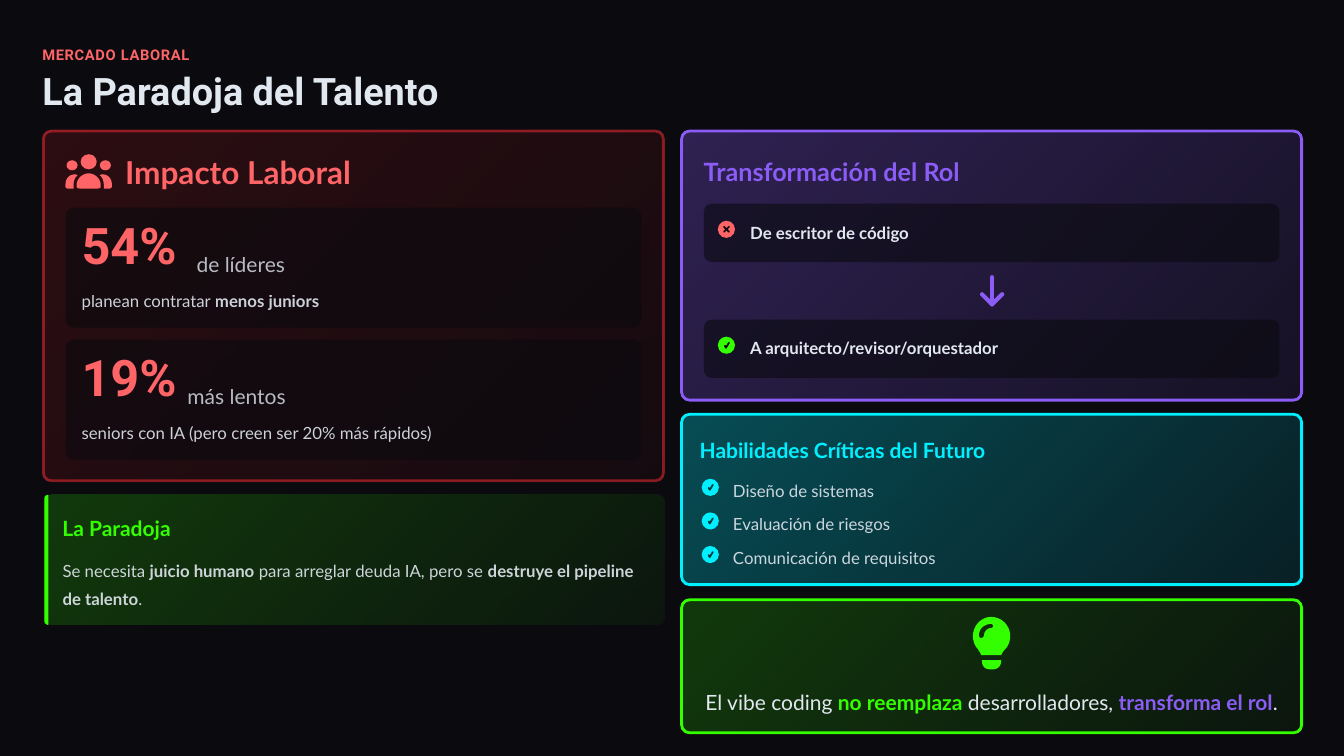
from lxml import etree
from pptx import Presentation
from pptx.dml.color import RGBColor
from pptx.enum.shapes import MSO_SHAPE
from pptx.enum.text import MSO_ANCHOR, PP_ALIGN
from pptx.oxml.ns import qn
from pptx.util import Inches, Pt

ROUNDED = MSO_SHAPE.ROUNDED_RECTANGLE
OVAL = MSO_SHAPE.OVAL
MIDDLE = MSO_ANCHOR.MIDDLE
LEFT = PP_ALIGN.LEFT
CENTER = PP_ALIGN.CENTER

NIGHT = RGBColor(0x0A, 0x0A, 0x0F)
TEAL = RGBColor(0x08, 0x36, 0x3F)
PALE = RGBColor(0xE2, 0xE8, 0xF0)
CORAL = RGBColor(0xFF, 0x64, 0x67)
RED = RGBColor(0xFB, 0x2C, 0x36)
MAROON = RGBColor(0x82, 0x18, 0x1A)
GREEN = RGBColor(0x33, 0xFF, 0x00)
PURPLE = RGBColor(0x8B, 0x5C, 0xF6)
CYAN = RGBColor(0x00, 0xF0, 0xFF)

CORNER = 0.08
CURVE_STEPS = 10
CHECK = [[(0.07, 0.09), (0.08, 0.11), (0.11, 0.06)]]
CROSS = [[(0.06, 0.06), (0.11, 0.11)], [(0.11, 0.06), (0.06, 0.11)]]


def set_alpha(element, percent):
    for color in element.iter(qn("a:srgbClr")):
        etree.SubElement(color, qn("a:alpha")).set("val", str(percent * 1000))


def add_solid(slide, preset, box, color, alpha=100):
    shape = slide.shapes.add_shape(preset, *map(Inches, box))
    shape.shadow.inherit = False
    shape.fill.solid()
    shape.fill.fore_color.rgb = color
    shape.line.fill.background()
    if alpha < 100:
        set_alpha(shape.fill._xPr, alpha)
    if preset == ROUNDED:
        shape.adjustments[0] = CORNER / min(box[2:])
    return shape


def add_card(slide, box, color, alphas, border=None, border_alpha=100):
    card = add_solid(slide, ROUNDED, box, color)
    card.fill.gradient()
    card.fill.gradient_angle = 315
    for stop, position, alpha in zip(card.fill.gradient_stops, (0, 1), alphas):
        stop.position = position
        stop.color.rgb = color
        set_alpha(stop._gs, alpha)
    if border is not None:
        card.line.color.rgb = border
        card.line.width = Pt(2)
        if border_alpha < 100:
            set_alpha(card.line._ln, border_alpha)


def add_panel(slide, left, top, height):
    add_solid(slide, ROUNDED, (left, top, 5.71, height), NIGHT, 60)


def add_text(slide, box, runs, size, spacing=1.2, font="Lato", alpha=100,
             align=LEFT, tracking=None):
    frame = slide.shapes.add_textbox(*map(Inches, box)).text_frame
    frame.word_wrap = True
    frame.vertical_anchor = MIDDLE
    frame.margin_left = frame.margin_right = 0
    frame.margin_top = frame.margin_bottom = 0
    paragraph = frame.paragraphs[0]
    paragraph.alignment = align
    paragraph.line_spacing = spacing
    for text, color, bold in runs:
        run = paragraph.add_run()
        run.text = text
        run.font.name = font
        run.font.size = Pt(size)
        run.font.bold = bold
        run.font.color.rgb = color
        if alpha < 100:
            set_alpha(run.font._element, alpha)
        if tracking:
            run.font._element.set("spc", str(tracking))


def flatten(contour):
    points = [contour[0]]
    for segment in contour[1:]:
        if len(segment) == 2:
            points.append(segment)
            continue
        knots = [points[-1], segment[:2], segment[2:4], segment[4:]]
        for step in range(1, CURVE_STEPS + 1):
            t = step / CURVE_STEPS
            weights = ((1 - t) ** 3, 3 * t * (1 - t) ** 2, 3 * t * t * (1 - t), t ** 3)
            points.append(tuple(
                sum(weight * knot[axis] for weight, knot in zip(weights, knots))
                for axis in (0, 1)))
    return points


def build_outline(slide, contours, closed):
    builder = None
    for contour in contours:
        points = [(Inches(x), Inches(y)) for x, y in flatten(contour)]
        if builder is None:
            builder = slide.shapes.build_freeform(*points[0])
        else:
            builder.move_to(*points[0])
        builder.add_line_segments(points[1:], close=closed)
    shape = builder.convert_to_shape()
    shape.shadow.inherit = False
    return shape


def add_outline(slide, contours, color):
    shape = build_outline(slide, contours, True)
    shape.fill.solid()
    shape.fill.fore_color.rgb = color
    shape.line.fill.background()


def add_stroke(slide, contours, color, width):
    shape = build_outline(slide, contours, False)
    shape.fill.background()
    shape.line.color.rgb = color
    shape.line.width = Pt(width)
    shape.line._ln.set("cap", "rnd")


def add_badge(slide, left, top, color, mark, mark_color):
    add_solid(slide, OVAL, (left, top, 0.17, 0.17), color)
    strokes = [[(left + x, top + y) for x, y in line] for line in mark]
    add_stroke(slide, strokes, mark_color, 1.25)


def add_people_icon(slide):
    for head in ((0.8, 1.53, 0.16, 0.15), (0.66, 1.59, 0.11, 0.1), (0.99, 1.59, 0.11, 0.1)):
        add_solid(slide, OVAL, head, CORAL)
    side = [(0.65, 1.83), (0.65, 1.77, 0.69, 1.73, 0.74, 1.73),
            (0.75, 1.73, 0.76, 1.73, 0.77, 1.74), (0.74, 1.76, 0.73, 1.8, 0.73, 1.84),
            (0.73, 1.87), (0.67, 1.87), (0.66, 1.87, 0.65, 1.86, 0.65, 1.85)]
    mirrored = [tuple(1.76 - value if index % 2 == 0 else value
                      for index, value in enumerate(segment)) for segment in side]
    middle = [(0.76, 1.84), (0.76, 1.77, 0.82, 1.72, 0.88, 1.72),
              (0.94, 1.72, 1, 1.77, 1, 1.84), (1, 1.85), (1, 1.86, 0.99, 1.87, 0.97, 1.87),
              (0.79, 1.87), (0.77, 1.87, 0.76, 1.86, 0.76, 1.85)]
    add_outline(slide, [side, mirrored, middle], CORAL)


def add_bulb_icon(slide):
    glass = [(9.93, 6.5), (9.94, 6.48, 9.95, 6.46, 9.97, 6.44),
             (10, 6.41, 10.02, 6.36, 10.02, 6.31), (10.02, 6.21, 9.94, 6.12, 9.83, 6.12),
             (9.73, 6.12, 9.65, 6.21, 9.65, 6.31), (9.65, 6.36, 9.67, 6.41, 9.7, 6.44),
             (9.71, 6.46, 9.73, 6.48, 9.73, 6.5)]
    base = [(9.93, 6.55), (9.74, 6.55), (9.74, 6.56), (9.74, 6.61, 9.77, 6.64, 9.82, 6.64),
            (9.85, 6.64), (9.89, 6.64, 9.93, 6.61, 9.93, 6.56)]
    glint = [(9.83, 6.23), (9.79, 6.23, 9.76, 6.27, 9.76, 6.3),
             (9.76, 6.32, 9.74, 6.33, 9.73, 6.33), (9.72, 6.33, 9.71, 6.32, 9.71, 6.3),
             (9.71, 6.24, 9.76, 6.19, 9.83, 6.19), (9.84, 6.19, 9.85, 6.2, 9.85, 6.21),
             (9.85, 6.22, 9.84, 6.23, 9.83, 6.23)]
    add_outline(slide, [glass, base, glint], GREEN)


def add_statistic(slide, top, figure, label, label_left, detail):
    add_panel(slide, 0.65, top, 1.19)
    add_text(slide, (0.81, top + 0.17, 1.26, 0.5), [(figure, CORAL, True)], 36, 0.8, "Roboto")
    add_text(slide, (label_left, top + 0.39, 1.07, 0.29), [(label, PALE, False)], 15, alpha=80)
    add_text(slide, (0.81, top + 0.77, 5.46, 0.25), detail, 12, 1.3, alpha=90)


def add_role(slide, top, text, color, mark):
    add_panel(slide, 6.98, top, 0.58)
    add_badge(slide, 7.12, top + 0.17, color, mark, NIGHT)
    add_text(slide, (7.44, top + 0.13, 2.8, 0.25), [(text, PALE, True)], 12, 1.3)


def add_impact(slide):
    add_card(slide, (0.43, 1.3, 6.15, 3.47), MAROON, (30, 10), RED, 50)
    add_people_icon(slide)
    add_text(slide, (1.24, 1.52, 2.48, 0.38), [("Impacto Laboral", CORAL, True)], 22.5, 1.0)
    add_statistic(slide, 2.06, "54%", "de líderes", 1.95,
                  [("planean contratar ", PALE, False), ("menos juniors", PALE, True)])
    add_statistic(slide, 3.37, "19%", "más lentos", 1.86,
                  [("seniors con IA (pero creen ser 20% más rápidos)", PALE, False)])


def add_paradox(slide):
    add_card(slide, (0.44, 4.91, 6.15, 1.29), GREEN, (20, 5))
    add_outline(slide, [[(0.48, 4.91), (0.48, 6.2), (0.46, 6.2, 0.44, 6.18, 0.44, 6.16),
                         (0.44, 4.95), (0.44, 4.92, 0.46, 4.91, 0.48, 4.91)]], GREEN)
    add_text(slide, (0.62, 5.07, 5.9, 0.29), [("La Paradoja", GREEN, True)], 15)
    add_text(slide, (0.62, 5.49, 5.88, 0.54), [
        ("Se necesita ", PALE, False), ("juicio humano", PALE, True),
        (" para arreglar deuda IA, pero se ", PALE, False),
        ("destruye el pipeline de talento", PALE, True), (".", PALE, False)], 12, 1.4, alpha=90)


def add_transformation(slide):
    add_card(slide, (6.76, 1.3, 6.15, 2.67), PURPLE, (30, 10), PURPLE)
    add_text(slide, (6.98, 1.52, 5.83, 0.33), [("Transformación del Rol", PURPLE, True)], 18, 1.1)
    add_role(slide, 2.02, "De escritor de código", CORAL, CROSS)
    add_stroke(slide, [[(9.84, 2.75), (9.84, 3.02)],
                       [(9.74, 2.92), (9.84, 3.02), (9.94, 2.92)]], PURPLE, 3)
    add_role(slide, 3.17, "A arquitecto/revisor/orquestador", GREEN, CHECK)


def add_skills(slide):
    add_card(slide, (6.76, 4.11, 6.15, 1.69), CYAN, (30, 10), CYAN)
    add_text(slide, (6.94, 4.29, 5.9, 0.29), [("Habilidades Críticas del Futuro", CYAN, True)], 15)
    skills = ("Diseño de sistemas", "Evaluación de riesgos", "Comunicación de requisitos")
    for index, skill in enumerate(skills):
        top = 4.71 + index * 1 / 3
        add_badge(slide, 6.96, top + 0.04, CYAN, CHECK, TEAL)
        add_text(slide, (7.27, top, 2.3, 0.25), [(skill, PALE, False)], 12, 1.3, alpha=90)


def add_conclusion(slide):
    add_card(slide, (6.76, 5.95, 6.15, 1.32), GREEN, (20, 5), GREEN)
    add_bulb_icon(slide)
    add_text(slide, (6.92, 6.75, 5.83, 0.34), [
        ("El vibe coding ", PALE, False), ("no reemplaza", GREEN, True),
        (" desarrolladores, ", PALE, False), ("transforma el rol", PURPLE, True),
        (".", PALE, False)], 15, 1.4, align=CENTER)


def main():
    presentation = Presentation()
    presentation.slide_width = Inches(13.33)
    presentation.slide_height = Inches(7.5)
    slide = presentation.slides.add_slide(presentation.slide_layouts[6])
    slide.background.fill.solid()
    slide.background.fill.fore_color.rgb = NIGHT
    add_text(slide, (0.42, 0.42, 12.57, 0.21), [("MERCADO LABORAL", CORAL, True)],
             10.5, font="Roboto", tracking=50)
    add_text(slide, (0.42, 0.71, 12.69, 0.42), [("La Paradoja del Talento", PALE, True)],
             27, 0.9, "Roboto")
    add_impact(slide)
    add_paradox(slide)
    add_transformation(slide)
    add_skills(slide)
    add_conclusion(slide)
    presentation.save("out.pptx")


if __name__ == "__main__":
    main()
